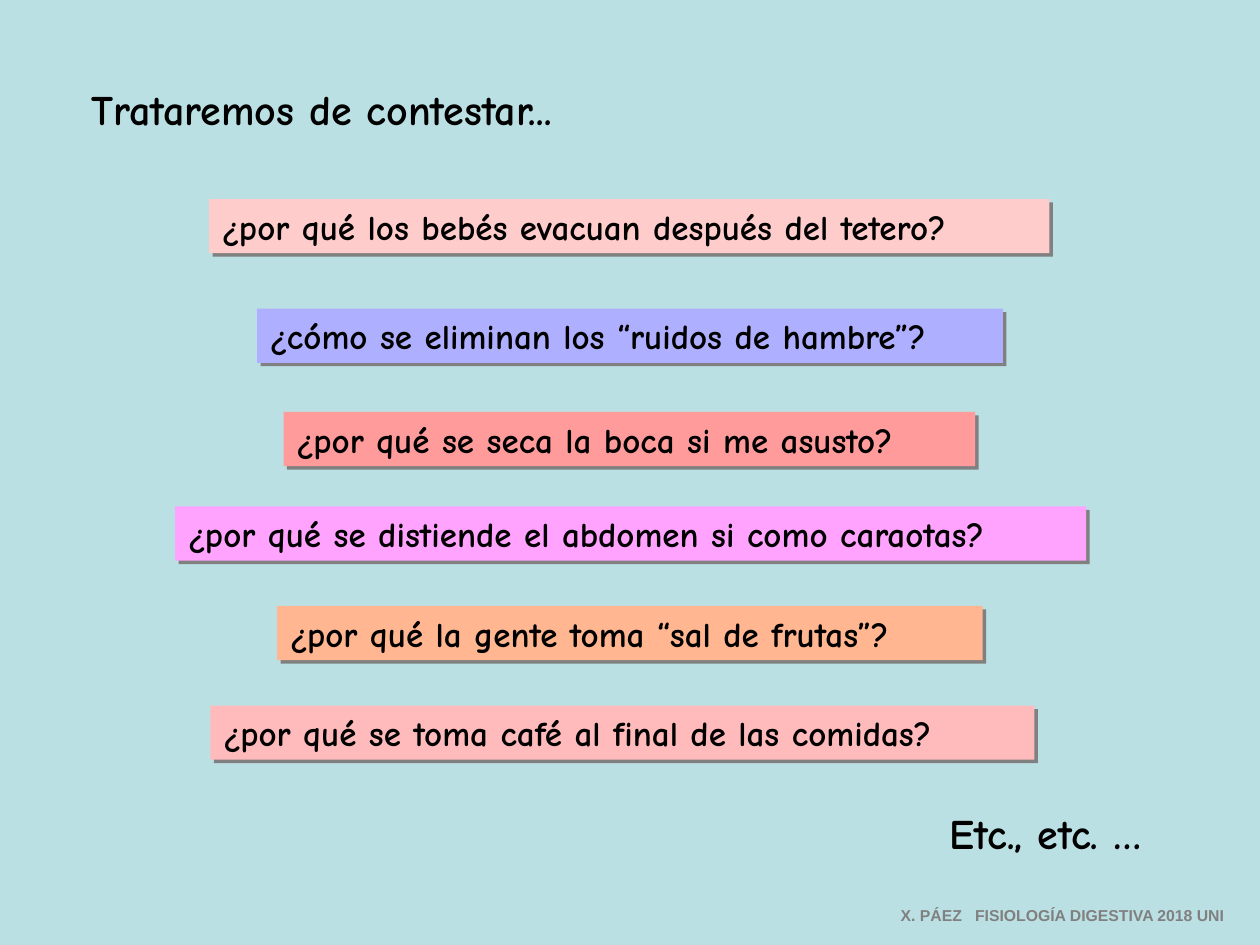
import pptx
import pptx.dml.color
import pptx.enum.shapes
import pptx.enum.text
import pptx.oxml
import pptx.oxml.ns
import pptx.util
from pptx.dml.color import RGBColor
from pptx.util import Inches

BACKGROUND = RGBColor(0xBB, 0xE0, 0xE3)
BLACK = RGBColor(0x00, 0x00, 0x00)
GRAY = RGBColor(0x80, 0x80, 0x80)
PALE_PINK = RGBColor(0xFF, 0xCC, 0xCC)
LAVENDER = RGBColor(0xAF, 0xAF, 0xFF)
CORAL = RGBColor(0xFF, 0x9B, 0x9B)
MAGENTA = RGBColor(0xFF, 0xA3, 0xFF)
PEACH = RGBColor(0xFF, 0xB6, 0x91)
PINK = RGBColor(0xFF, 0xBB, 0xBB)

QUESTION_HEIGHT = 0.43
QUESTIONS = [
    (1.66, 1.58, 6.67, PALE_PINK, "¿por qué los bebés evacuan después del tetero?"),
    (2.04, 2.45, 5.92, LAVENDER, "¿cómo se eliminan los “ruidos de hambre”?"),
    (2.25, 3.27, 5.49, CORAL, "¿por qué se seca la boca si me asusto?"),
    (1.39, 4.02, 7.23, MAGENTA, "¿por qué se distiende el abdomen si como caraotas?"),
    (2.20, 4.81, 5.60, PEACH, "¿por qué la gente toma “sal de frutas”?"),
    (1.67, 5.60, 6.54, PINK, "¿por qué se toma café al final de las comidas?"),
]


class Deck:
    font = "Comic Neue"

    def __init__(self, prs):
        self.s = prs.slides.add_slide(prs.slide_layouts[6])
        self.s.background.fill.solid()
        self.s.background.fill.fore_color.rgb = BACKGROUND

    def set_text(self, sp, text, size, color=BLACK, font=None):
        tf = sp.text_frame
        tf.word_wrap = True
        tf.auto_size = pptx.enum.text.MSO_AUTO_SIZE.SHAPE_TO_FIT_TEXT
        tf.vertical_anchor = pptx.enum.text.MSO_ANCHOR.TOP
        tf.text = text
        p = tf.paragraphs[0]
        p.alignment = pptx.enum.text.PP_ALIGN.LEFT
        for r in p.runs:
            r.font.name = font or self.font
            r.font.size = pptx.util.Pt(size)
            r.font.bold = True
            r.font.color.rgb = color
        return p

    def text(self, x, y, w, h, text, size, **style):
        sp = self.s.shapes.add_textbox(Inches(x), Inches(y), Inches(w), Inches(h))
        return self.set_text(sp, text, size, **style)

    def question(self, x, y, w, fill, text):
        sp = self.s.shapes.add_shape(
            pptx.enum.shapes.MSO_SHAPE.RECTANGLE,
            Inches(x), Inches(y), Inches(w), Inches(QUESTION_HEIGHT))
        sp.fill.solid()
        sp.fill.fore_color.rgb = fill
        sp.line.fill.background()
        self.hard_shadow(sp)
        self.set_text(sp, text, 20)

    def hard_shadow(self, sp):
        """Give the shape an unblurred gray shadow towards the lower right."""
        sp.shadow.inherit = False
        effects = sp._element.spPr.find(pptx.oxml.ns.qn("a:effectLst"))
        effects.append(pptx.oxml.parse_xml(
            f'<a:outerShdw {pptx.oxml.ns.nsdecls("a")} blurRad="0" '
            f'dist="{pptx.util.Pt(2.8)}" dir="2700000" algn="ctr" rotWithShape="0">'
            f'<a:srgbClr val="{GRAY}"/></a:outerShdw>'))

    def tab_stop(self, p, position):
        p._p.get_or_add_pPr().append(pptx.oxml.parse_xml(
            f'<a:tabLst {pptx.oxml.ns.nsdecls("a")}>'
            f'<a:tab pos="{Inches(position)}" algn="l"/></a:tabLst>'))


def main():
    prs = pptx.Presentation()
    prs.slide_width, prs.slide_height = Inches(10), Inches(7.5)
    deck = Deck(prs)
    for question in QUESTIONS:
        deck.question(*question)
    deck.text(0.63, 0.61, 4.69, 0.5, "Trataremos de contestar...", 24)
    deck.text(7.44, 6.36, 2.2, 0.5, "Etc., etc. …", 24)
    footer = deck.text(7.05, 7.14, 2.92, 0.25,
                       "X. PÁEZ\tFISIOLOGÍA DIGESTIVA 2018 UNI", 9,
                       color=GRAY, font="Arial")
    deck.tab_stop(footer, 0.59)
    prs.save("out.pptx")


if __name__ == "__main__":
    main()
